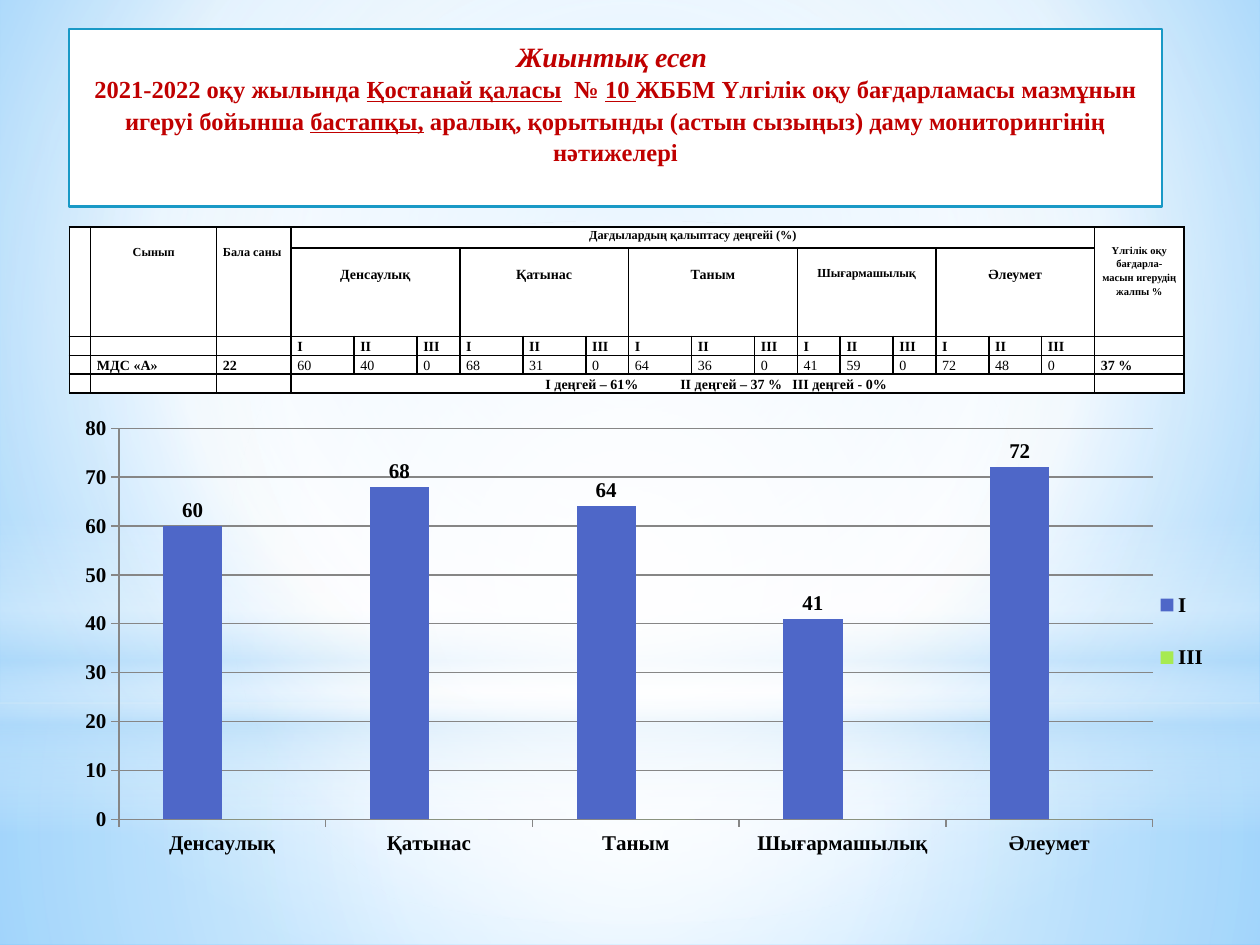
from dataclasses import dataclass

from lxml import etree
from pptx import Presentation
from pptx.chart.data import CategoryChartData
from pptx.dml.color import RGBColor
from pptx.enum.chart import XL_CHART_TYPE, XL_LABEL_POSITION, XL_LEGEND_POSITION, XL_TICK_MARK
from pptx.enum.shapes import MSO_SHAPE
from pptx.enum.text import MSO_ANCHOR, PP_ALIGN
from pptx.oxml.ns import qn
from pptx.util import Inches, Pt

COLUMN = XL_CHART_TYPE.COLUMN_CLUSTERED
RIGHT, ABOVE = XL_LEGEND_POSITION.RIGHT, XL_LABEL_POSITION.OUTSIDE_END
OUTSIDE = XL_TICK_MARK.OUTSIDE
RECT, OVAL = MSO_SHAPE.RECTANGLE, MSO_SHAPE.OVAL
LEFT, CENTER, TOP = PP_ALIGN.LEFT, PP_ALIGN.CENTER, MSO_ANCHOR.TOP


@dataclass(frozen=True)
class Theme:
    font: str = "Times New Roman"
    ink: str = "000000"
    paper: str = "FFFFFF"
    red: str = "C00000"
    frame: str = "1999C6"
    sky: str = "B4DCFA"
    grid: str = "868686"
    bars: tuple = ("4E67C8", "A7EA52")
    head: float = 16
    body: float = 14
    axis: float = 12
    cell: float = 8
    small: float = 7
    tiny: float = 6


T = Theme()
AREAS = ["Денсаулық", "Қатынас", "Таным", "Шығармашылық", "Әлеумет"]
SHARES = [(60, 40, 0), (68, 31, 0), (64, 36, 0), (41, 59, 0), (72, 48, 0)]
WIDTHS = [0.17, 1, 0.59] + [0.5, 0.5, 0.34] * 3 + [0.34, 0.42, 0.34] + [0.42] * 3 + [0.71]
HEIGHTS = [0.17, 0.7, 0.15, 0.15, 0.15]


def rgb(code):
    return RGBColor.from_string(code)


def sub(node, tag, **attrs):
    return etree.SubElement(node, qn(tag), {k: str(v) for k, v in attrs.items()})


def style(font, size, color=T.ink, bold=True):
    font.name, font.size, font.bold = T.font, Pt(size), bold
    font.color.rgb = rgb(color)


def blend(owner, fill, stops, focus=None):
    """Give a gradient of (place, colour, opacity), round if it has a focus."""
    fill.gradient()
    grad = next(owner.iter(qn("a:gradFill")))
    for child in list(grad):
        grad.remove(child)
    row = sub(grad, "a:gsLst")
    for place, code, alpha in stops:
        color = sub(sub(row, "a:gs", pos=place * 1000), "a:srgbClr", val=code)
        sub(color, "a:alpha", val=alpha * 1000)
    if focus:
        ring = sub(grad, "a:path", path="circle")
        sub(ring, "a:fillToRect", **{k: v * 1000 for k, v in zip("ltrb", focus)})
    else:
        sub(grad, "a:lin", ang=90 * 60000, scaled=0)


def add_sky(slide):
    blend(slide.element, slide.background.fill,
          [(0, "9ED5FF", 100), (60, T.paper, 100), (100, "5BB9FF", 100)], (20, 10, 20, 60))
    mid = (50, 50, 50, 50)
    white, sky = T.paper, T.sky
    layers = [
        (RECT, 5.58, 1.92, [(0, white, 91), (37, white, 76), (100, sky, 79)], mid),
        (RECT, 0, 5.58, [(0, white, 89), (48, white, 62), (100, sky, 79)], mid),
        (RECT, 4.12, 2.5, [(0, white, 0), (29, white, 30), (45, sky, 40),
                           (55, white, 26), (65, sky, 60), (100, white, 0)], None),
        (OVAL, 1.75, 5.58, [(0, white, 100), (56, white, 0)], mid),
    ]
    for kind, top, high, stops, focus in layers:
        shape = slide.shapes.add_shape(kind, 0, Inches(top), Inches(10), Inches(high))
        shape.shadow.inherit = False
        shape.line.fill.background()
        blend(shape.element.spPr, shape.fill, stops, focus)


def add_title(slide, left, top, width, height):
    title = slide.shapes.title
    slide.shapes.element.append(title.element)  # in front of the sky
    title.left, title.top = Inches(left), Inches(top)
    title.width, title.height = Inches(width), Inches(height)
    title.fill.solid()
    title.fill.fore_color.rgb = rgb(T.paper)
    title.line.color.rgb = rgb(T.frame)
    title.line.width = Pt(1.25)
    frame = title.text_frame
    frame.word_wrap, frame.vertical_anchor = True, TOP
    frame.margin_top = Inches(0.08)
    head = frame.paragraphs[0]
    head.alignment = CENTER
    run = head.add_run()
    run.text = "Жиынтық есеп "
    style(run.font, T.head, T.red)
    run.font.italic = True
    body = frame.add_paragraph()
    body.alignment, body.line_spacing = CENTER, 1.06
    for text, line in [
        ("2021-2022 оқу жылында ", False), ("Қостанай қаласы", True), ("  № ", False),
        ("10 ", True), ("ЖББМ Үлгілік оқу бағдарламасы мазмұнын игеруі бойынша ", False),
        ("бастапқы,", True),
        (" аралық, қорытынды (астын сызыңыз) даму мониторингінің нәтижелері", False),
    ]:
        run = body.add_run()
        run.text = text
        style(run.font, T.body, T.red)
        run.font.underline = line


def prep(cell):
    """Give a cell thin black borders, white fill and tight margins."""
    props = cell._tc.get_or_add_tcPr()
    for side in ("a:lnL", "a:lnR", "a:lnT", "a:lnB"):
        line = sub(props, side, w=Pt(1))
        sub(sub(line, "a:solidFill"), "a:srgbClr", val=T.ink)
    cell.fill.solid()
    cell.fill.fore_color.rgb = rgb(T.paper)
    cell.margin_left = cell.margin_right = Inches(0.05)
    cell.margin_top = cell.margin_bottom = 0
    para = cell.text_frame.paragraphs[0]
    para.line_spacing = 1.15
    sub(para._p, "a:endParaRPr", sz=int(T.small * 100))


def write(cell, text, size=T.cell, align=LEFT, bold=True, drop=0):
    para = cell.text_frame.paragraphs[0]
    para.alignment = align
    run = para.add_run()
    run.text = text
    style(run.font, size, bold=bold)
    cell.margin_top = Inches(drop)


def add_table(slide, left, top):
    rows, cols = len(HEIGHTS), len(WIDTHS)
    last = cols - 1
    table = slide.shapes.add_table(rows, cols, Inches(left), Inches(top),
                                   Inches(sum(WIDTHS)), Inches(sum(HEIGHTS))).table
    table.first_row = table.horz_banding = False
    for col, width in zip(table.columns, WIDTHS):
        col.width = Inches(width)
    for row, height in zip(table.rows, HEIGHTS):
        row.height = Inches(height)
    for cell in table.iter_cells():
        prep(cell)
    at = table.cell
    for col in (0, 1, 2, last):
        at(0, col).merge(at(1, col))
    for row in (0, 4):
        at(row, 3).merge(at(row, last - 1))
    drop = 0.13
    write(at(0, 1), "Сынып", T.small, CENTER, drop=drop)
    write(at(0, 2), "Бала саны", T.small, drop=drop)
    write(at(0, 3), "Дағдылардың қалыптасу деңгейі (%)", T.small, CENTER)
    write(at(0, last), "Үлгілік оқу бағдарла-масын игерудің жалпы %", T.tiny, CENTER, drop=drop)
    for i, (area, shares) in enumerate(zip(AREAS, SHARES)):
        col = 3 + 3 * i
        at(1, col).merge(at(1, col + 2))
        size = T.small if area == "Шығармашылық" else T.cell
        write(at(1, col), area, size, CENTER, drop=drop)
        for j, share in enumerate(shares):
            write(at(2, col + j), "I" * (j + 1))
            write(at(3, col + j), str(share), bold=False)
    for col, text in ((1, "МДС «А»"), (2, "22"), (last, "37 %")):
        write(at(3, col), text)
    total = at(4, 3)
    write(total, "І деңгей – 61%\tІІ деңгей – 37 %\tІІІ деңгей - 0%")
    total.margin_left = Inches(2.02)
    tabs = sub(total.text_frame.paragraphs[0]._p.get_or_add_pPr(), "a:tabLst")
    for stop in (1.07, 1.96):
        sub(tabs, "a:tab", pos=Inches(stop), algn="l")


def place(node, spot, inner=False):
    """Fix a chart part at left, top, width, height, as shares of the chart."""
    for old in node.findall(qn("c:layout")):
        node.remove(old)
    layout = etree.Element(qn("c:layout"))
    manual = sub(layout, "c:manualLayout")
    if inner:
        sub(manual, "c:layoutTarget", val="inner")
    for key in "xy":
        sub(manual, f"c:{key}Mode", val="edge")
    for key, value in zip("xywh", spot):
        sub(manual, f"c:{key}", val=value)
    node.insert(0 if inner else 1, layout)


def add_chart(slide, left, top, width, height):
    data = CategoryChartData()
    data.categories = AREAS
    for name, part in (("І", 0), ("ІІІ", 2)):
        data.add_series(name, [shares[part] for shares in SHARES])
    chart = slide.shapes.add_chart(COLUMN, Inches(left), Inches(top), Inches(width),
                                   Inches(height), data).chart
    style(chart.font, T.axis)
    chart.has_title = False
    chart.has_legend = True
    chart.legend.position = RIGHT
    chart.legend.include_in_layout = False
    style(chart.legend.font, T.axis)
    plot = chart.plots[0]
    plot.gap_width, plot.overlap, plot.vary_by_categories = 150, 0, False
    for series, code in zip(plot.series, T.bars):
        series.format.fill.solid()
        series.format.fill.fore_color.rgb = rgb(code)
    labels = plot.series[0].data_labels
    labels.show_value, labels.position = True, ABOVE
    style(labels.font, T.axis)
    for axis in (chart.category_axis, chart.value_axis):
        axis.major_tick_mark = OUTSIDE
        axis.format.line.color.rgb = rgb(T.grid)
        style(axis.tick_labels.font, T.axis)
    scale = chart.value_axis
    scale.minimum_scale, scale.maximum_scale, scale.major_unit = 0, 80, 10
    scale.major_gridlines.format.line.color.rgb = rgb(T.grid)
    area = chart.element.find(".//" + qn("c:plotArea"))
    place(area, (0.06, 0.03, 0.89, 0.78), inner=True)
    place(chart.element.find(".//" + qn("c:legend")), (0.95, 0.3, 0.05, 0.27))


def main():
    deck = Presentation()
    deck.slide_width, deck.slide_height = Inches(10), Inches(7.5)
    slide = deck.slides.add_slide(deck.slide_layouts[5])
    add_sky(slide)
    add_table(slide, 0.55, 1.8)
    add_title(slide, 0.55, 0.23, 8.67, 1.41)
    add_chart(slide, 0.39, 3.28, 9.22, 3.98)
    deck.save("out.pptx")


if __name__ == "__main__":
    main()
